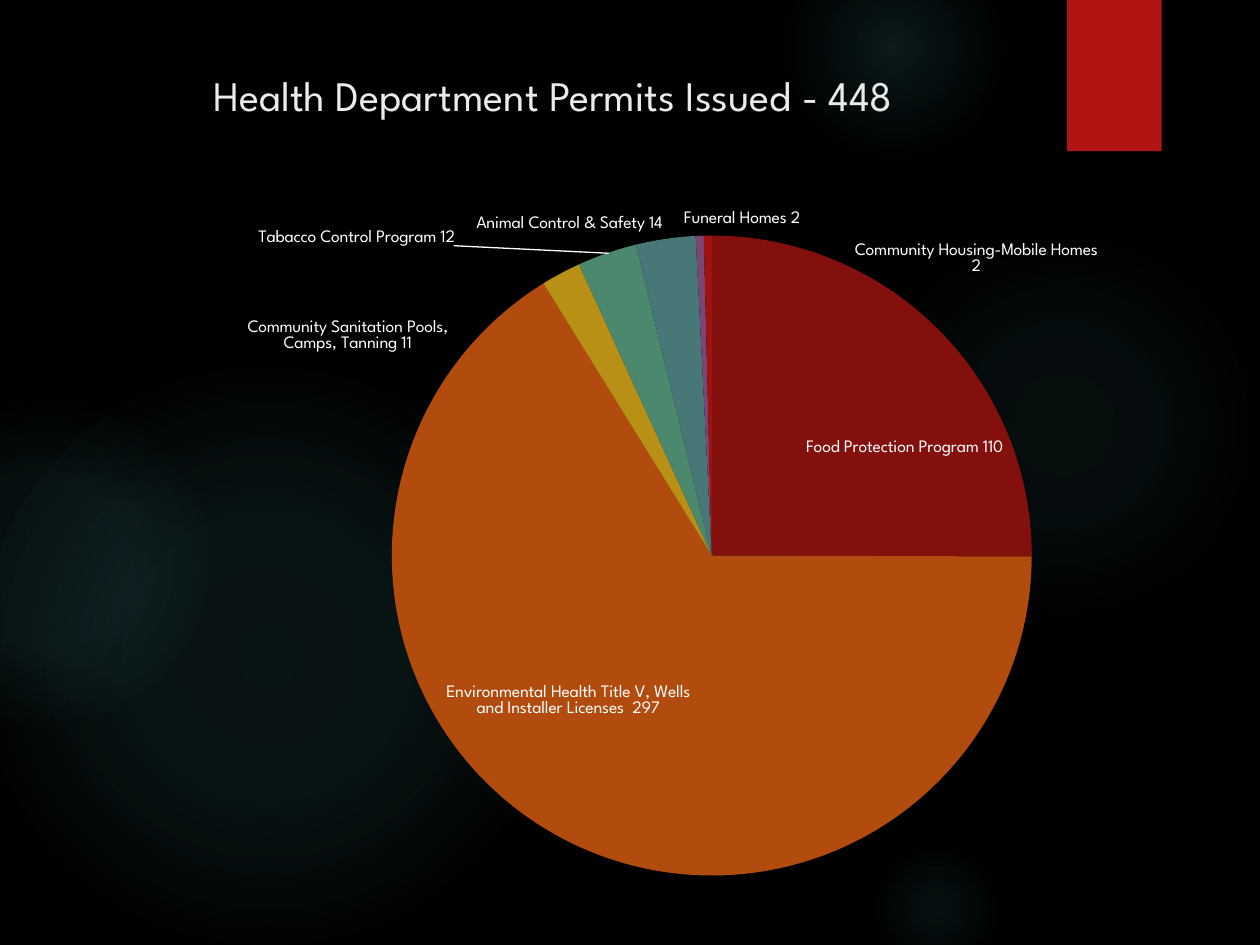
import math
from lxml import etree
from pptx import Presentation
from pptx import util as u
from pptx.chart.data import CategoryChartData
from pptx.dml.color import RGBColor
from pptx.enum import chart as charts, shapes, text
from pptx.oxml import parse_xml
from pptx.oxml.ns import qn, nsdecls

FONT = "League Spartan"
BLACK = RGBColor(0x00, 0x00, 0x00)
WHITE = RGBColor(0xFF, 0xFF, 0xFF)
PALE = RGBColor(0xEB, 0xEB, 0xEB)
RED = RGBColor(0xB0, 0x15, 0x13)
ORANGE = RGBColor(0xEA, 0x63, 0x12)
GOLD = RGBColor(0xE6, 0xB7, 0x29)
GREEN = RGBColor(0x6A, 0xAC, 0x90)
TEAL = RGBColor(0x5F, 0x9C, 0x9D)
PURPLE = RGBColor(0x9E, 0x5E, 0x9B)
GLOW = RGBColor(0x50, 0xB9, 0xC1)

TITLE = "Health Department Permits Issued - 448"
PERMITS = [
    ("Food Protection Program 110", 25, RED, 75, (7.18, 3.56)),
    ("Environmental Health Title V, Wells and Installer Licenses  297", 66, ORANGE, 76, (4.51, 5.57)),
    ("Community Sanitation Pools, Camps, Tanning 11", 2, GOLD, 76, (2.76, 2.67)),
    ("Tabacco Control Program 12", 3, GREEN, 76, (2.83, 1.89)),
    ("Animal Control & Safety 14", 3, TEAL, 76, (4.52, 1.78)),
    ("Funeral Homes 2", 0.4, PURPLE, 76, (5.89, 1.74)),
    ("Community Housing-Mobile Homes 2", 0.4, RED, 90, (7.75, 2.06)),
]
GLOWS = [
    (6.89, 1.83, 3.08, ((0, 7), (36, 6), (69, 0))),
    (6.22, -0.5, 1.75, ((0, 14), (36, 7), (73, 0))),
    (6.89, 6.67, 1.08, ((0, 9), (36, 5), (66, 0))),
    (-0.17, 2.92, 4.58, ((0, 11), (36, 10), (75, 0))),
    (-0.92, 3.17, 2.58, ((0, 8), (36, 8), (72, 0))),
]
TITLE_BOX = (0.53, 0.5, 7.72, 1.53)
TAB_BOX = (8.47, 0, 0.75, 1.2)
CHART_BOX = (0.9, 1.42, 8.51, 5.67)
PIE_CENTRE = (5.65, 4.41)
PIE_RADIUS = 2.54
LEADER = (3.6, 1.95, 4.83, 2.01)


def inches(values):
    return [u.Inches(value) for value in values]


def style(font, size, color):
    for name, value in {"name": FONT, "size": u.Pt(size), "bold": False}.items():
        setattr(font, name, value)
    font.color.rgb = color


def add_block(page, kind, box):
    block = page.shapes.add_shape(kind, *inches(box))
    block.shadow.inherit = False
    block.line.fill.background()
    return block


def add_glow(page, left, top, size, stops):
    glow = add_block(page, shapes.MSO_SHAPE.OVAL, (left, top, size, size))
    marks = "".join(
        f'<a:gs pos="{place * 1000}"><a:srgbClr val="{GLOW}">'
        f'<a:alpha val="{alpha * 1000}"/></a:srgbClr></a:gs>'
        for place, alpha in stops)
    gradient = parse_xml(
        f'<a:gradFill {nsdecls("a")}><a:gsLst>{marks}</a:gsLst><a:path path="circle">'
        '<a:fillToRect l="50000" t="50000" r="50000" b="50000"/></a:path></a:gradFill>')
    glow.element.spPr.find(qn("a:prstGeom")).addnext(gradient)


def manual_layout(**parts):
    items = "".join(f'<c:{name} val="{value}"/>' for name, value in parts.items())
    return parse_xml(
        f'<c:layout {nsdecls("c")}><c:manualLayout>{items}</c:manualLayout></c:layout>')


def set_pie_area(chart):
    left, top, width, height = CHART_BOX
    area = chart.element.find(".//" + qn("c:plotArea"))
    for old in area.findall(qn("c:layout")):
        area.remove(old)
    area.insert(0, manual_layout(
        layoutTarget="inner", xMode="edge", yMode="edge",
        x=round((PIE_CENTRE[0] - PIE_RADIUS - left) / width, 4),
        y=round((PIE_CENTRE[1] - PIE_RADIUS - top) / height, 4),
        w=round(2 * PIE_RADIUS / width, 4),
        h=round(2 * PIE_RADIUS / height, 4)))


def add_permit_chart(page):
    total = sum(permit[1] for permit in PERMITS)
    data = CategoryChartData(number_format="0.00")
    data.categories = [permit[0] for permit in PERMITS]
    data.add_series("Series 1", [permit[1] for permit in PERMITS])
    chart = page.shapes.add_chart(
        charts.XL_CHART_TYPE.PIE, *inches(CHART_BOX), data).chart
    chart.has_title = False
    chart.has_legend = False
    style(chart.font, 10, WHITE)
    chart.plots[0].vary_by_categories = True
    set_pie_area(chart)

    series = chart.plots[0].series[0]
    labels = series.data_labels
    labels.show_category_name = True
    labels.show_value = False
    style(labels.font, 10, WHITE)

    passed = 0
    for index, (name, share, color, shade, target) in enumerate(PERMITS):
        point = series.points[index]
        point.format.fill.solid()
        point.format.fill.fore_color.rgb = color
        point.format.line.fill.background()
        paint = series._element.findall(qn("c:dPt"))[index].find(".//" + qn("a:srgbClr"))
        etree.SubElement(paint, qn("a:lumMod")).set("val", str(shade * 1000))
        label = point.data_label
        style(label.font, 10, WHITE)
        label.position = charts.XL_LABEL_POSITION.CENTER
        angle = 2 * math.pi * (passed + share / 2) / total
        passed += share
        middle = (PIE_CENTRE[0] + PIE_RADIUS / 2 * math.sin(angle),
                  PIE_CENTRE[1] - PIE_RADIUS / 2 * math.cos(angle))
        shift = [round((target[axis] - middle[axis]) / CHART_BOX[axis + 2], 4)
                 for axis in (0, 1)]
        entry = series._element.findall(".//" + qn("c:dLbl"))[index]
        entry.find(qn("c:idx")).addnext(manual_layout(x=shift[0], y=shift[1]))
        entry.find(qn("c:showVal")).set("val", "0")
        entry.find(qn("c:showCatName")).set("val", "1")

    for lines in series._element.iter(qn("c:showLeaderLines")):
        lines.set("val", "0")


def main():
    deck = Presentation()
    deck.slide_width, deck.slide_height = inches((10, 7.5))
    page = deck.slides.add_slide(deck.slide_layouts[5])
    page.background.fill.solid()
    page.background.fill.fore_color.rgb = BLACK

    for glow in GLOWS:
        add_glow(page, *glow)
    tab = add_block(page, shapes.MSO_SHAPE.RECTANGLE, TAB_BOX)
    tab.fill.solid()
    tab.fill.fore_color.rgb = RED

    title = page.shapes.title
    tab.element.addnext(title.element)
    title.left, title.top, title.width, title.height = inches(TITLE_BOX)
    frame = title.text_frame
    frame.text = TITLE
    frame.word_wrap = True
    frame.auto_size = text.MSO_AUTO_SIZE.NONE
    frame.vertical_anchor = text.MSO_ANCHOR.TOP
    frame.paragraphs[0].alignment = text.PP_ALIGN.CENTER
    style(frame.paragraphs[0].runs[0].font, 24, PALE)

    add_permit_chart(page)
    leader = page.shapes.add_connector(shapes.MSO_CONNECTOR.STRAIGHT, *inches(LEADER))
    leader.line.color.rgb = WHITE
    leader.line.width = u.Pt(0.75)
    etree.SubElement(leader.element.spPr, qn("a:effectLst"))
    deck.save("out.pptx")


if __name__ == "__main__":
    main()
